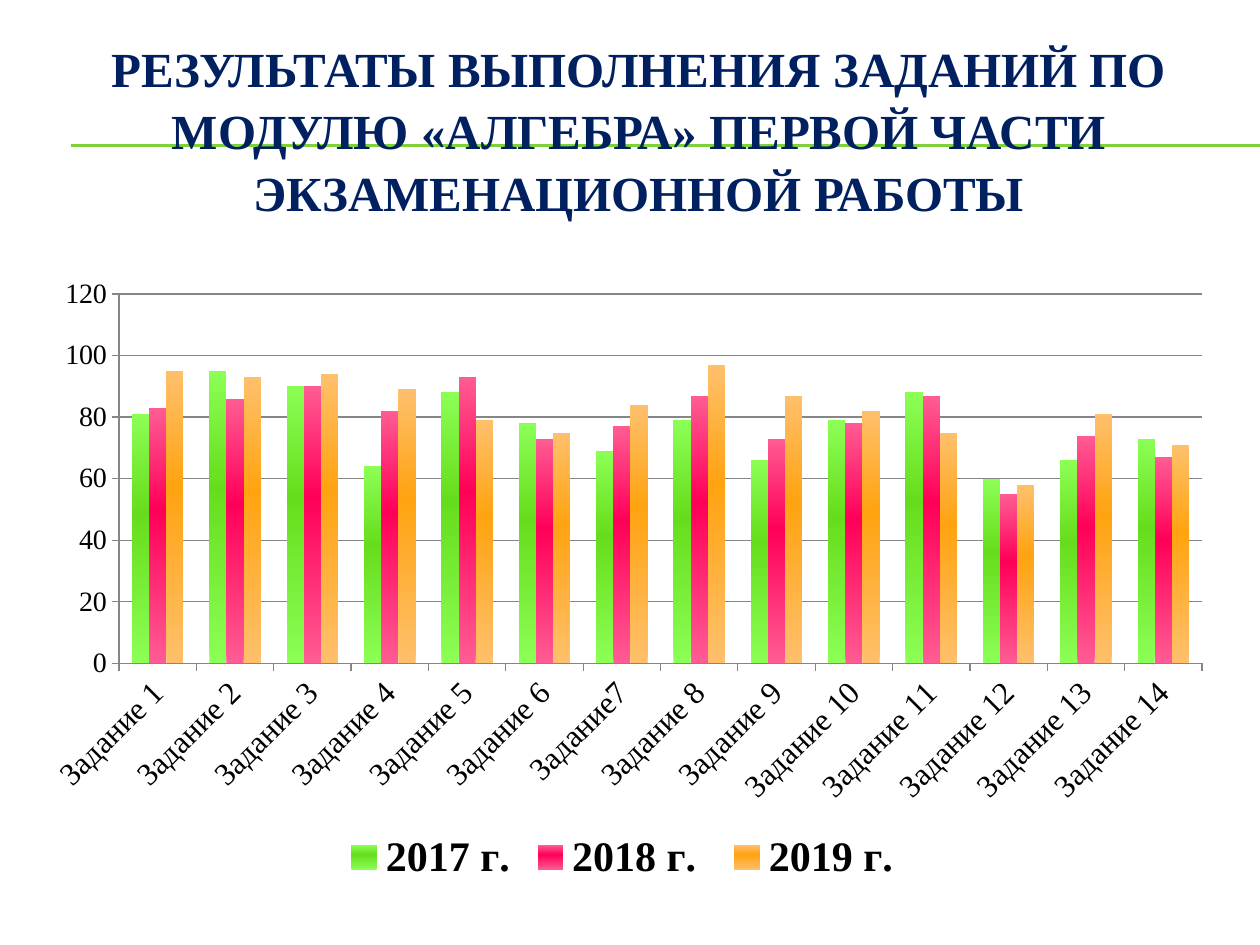
from copy import deepcopy
from pptx import Presentation
from pptx.chart.data import CategoryChartData as Data
from pptx.dml.color import RGBColor as RGB
from pptx.enum.chart import XL_CHART_TYPE as Kind, XL_LEGEND_POSITION as Pos, XL_TICK_MARK as Tick
from pptx.enum.shapes import MSO_CONNECTOR as Link
from pptx.enum.text import MSO_ANCHOR as Anchor, MSO_AUTO_SIZE as Fit, PP_ALIGN as Align
from pptx.oxml.ns import qn
from pptx.util import Inches, Pt

NAVY = RGB(0x00, 0x20, 0x60)
LIME = RGB(0x7F, 0xD1, 0x3B)
GRAY = RGB(0x86, 0x86, 0x86)
BLACK = RGB(0, 0, 0)
GREEN = RGB(0x66, 0xDD, 0x1C), RGB(0x8C, 0xFF, 0x55)
PINK = RGB(0xFF, 0x00, 0x58), RGB(0xFF, 0x5C, 0x94)
AMBER = RGB(0xFF, 0xA3, 0x10), RGB(0xFF, 0xC0, 0x6C)
SERIF = "Times New Roman"

TASKS = [f"Задание {n}" if n != 7 else "Задание7" for n in range(1, 15)]
YEARS = {
    "2017 г.": (GREEN, [81, 95, 90, 64, 88, 78, 69, 79, 66, 79, 88, 60, 66, 73]),
    "2018 г. ": (PINK, [83, 86, 90, 82, 93, 73, 77, 87, 73, 78, 87, 55, 74, 67]),
    "2019 г. ": (AMBER, [95, 93, 94, 89, 79, 75, 84, 97, 87, 82, 75, 58, 81, 71]),
}


def put(item, vals):
    for name, val in vals.items():
        setattr(item, name, val)


class Deck:
    def __init__(self, wide, high):
        self.prs = Presentation()
        self.wide, self.high = Inches(wide), Inches(high)
        put(self.prs, {"slide_width": self.wide, "slide_height": self.high})
        self.slide = self.prs.slides.add_slide(self.prs.slide_layouts[5])

    def box(self, x, y, w, h):
        return [int(self.wide * x), int(self.high * y), int(self.wide * w), int(self.high * h)]

    def font(self, font, size, bold=False, color=BLACK, face=SERIF):
        put(font, {"name": face, "size": Pt(size), "bold": bold})
        font.color.rgb = color

    def stroke(self, line, color):
        line.color.rgb = color
        line.width = Pt(0.75)

    def rule(self, x, y, end):
        line = self.slide.shapes.add_connector(Link.STRAIGHT, *self.box(x, y, end, y))
        self.stroke(line.line, LIME)
        props = line._element.spPr
        props.append(props.makeelement(qn("a:effectLst"), {}))

    def title(self, text, *area):
        head = self.slide.shapes.title
        put(head, dict(zip(("left", "top", "width", "height"), self.box(*area))))
        frame = head.text_frame
        frame.text = text
        put(frame, {"word_wrap": True, "auto_size": Fit.NONE, "vertical_anchor": Anchor.MIDDLE})
        para = frame.paragraphs[0]
        put(para, {"alignment": Align.CENTER, "line_spacing": 1.05})
        self.font(para.runs[0].font, 28, True, NAVY)
        tree = self.slide.shapes._spTree
        tree.append(head._element)

    def shade(self, bar, core, edge):
        fill = bar.format.fill
        fill.gradient()
        fill.gradient_angle = 90
        stops = bar._element.find(".//" + qn("a:gsLst"))
        stops.append(deepcopy(stops[0]))
        for stop, spot, color in zip(fill.gradient_stops, (0, 0.6, 1), (edge, core, edge)):
            stop.position = spot
            stop.color.rgb = color

    def chart(self, cats, rows, *area):
        data = Data()
        data.categories = cats
        for name, (_, vals) in rows.items():
            data.add_series(name, vals)
        shape = self.slide.shapes.add_chart(Kind.COLUMN_CLUSTERED, *self.box(*area), data)
        chart = shape.chart
        put(chart, {"has_title": False, "has_legend": True})
        self.font(chart.font, 10, face="Lato")
        put(chart.legend, {"position": Pos.BOTTOM, "include_in_layout": False})
        self.font(chart.legend.font, 24, True)
        plot = chart.plots[0]
        put(plot, {"gap_width": 50, "overlap": 0, "vary_by_categories": False})
        put(plot, {"gap_width": 150})
        for bar, (tones, _) in zip(plot.series, rows.values()):
            self.shade(bar, *tones)
        cat, val = chart.category_axis, chart.value_axis
        put(val, {"minimum_scale": 0, "maximum_scale": 120, "major_unit": 20,
                  "has_major_gridlines": True})
        self.stroke(val.major_gridlines.format.line, GRAY)
        for axis, size in ((cat, 18), (val, 16)):
            axis.major_tick_mark = Tick.OUTSIDE
            self.font(axis.tick_labels.font, size)
            self.stroke(axis.format.line, GRAY)
        cat._element.find(".//" + qn("a:bodyPr")).set("rot", "-2700000")
        put(plot, {"gap_width": 150})

    def save(self):
        self.prs.save("out.pptx")


def main():
    deck = Deck(10, 7.5)
    for y in (1.15, 1.16):
        deck.rule(0.056, y / 7.5, 1)
    deck.title("РЕЗУЛЬТАТЫ ВЫПОЛНЕНИЯ ЗАДАНИЙ ПО МОДУЛЮ «АЛГЕБРА» ПЕРВОЙ ЧАСТИ "
               "ЭКЗАМЕНАЦИОННОЙ РАБОТЫ", 0.031, 0.31 / 7.5, 0.952, 1.42 / 7.5)
    deck.chart(TASKS, YEARS, 0.023, 2.11 / 7.5, 0.95, 0.66)
    deck.save()


if __name__ == "__main__":
    main()
